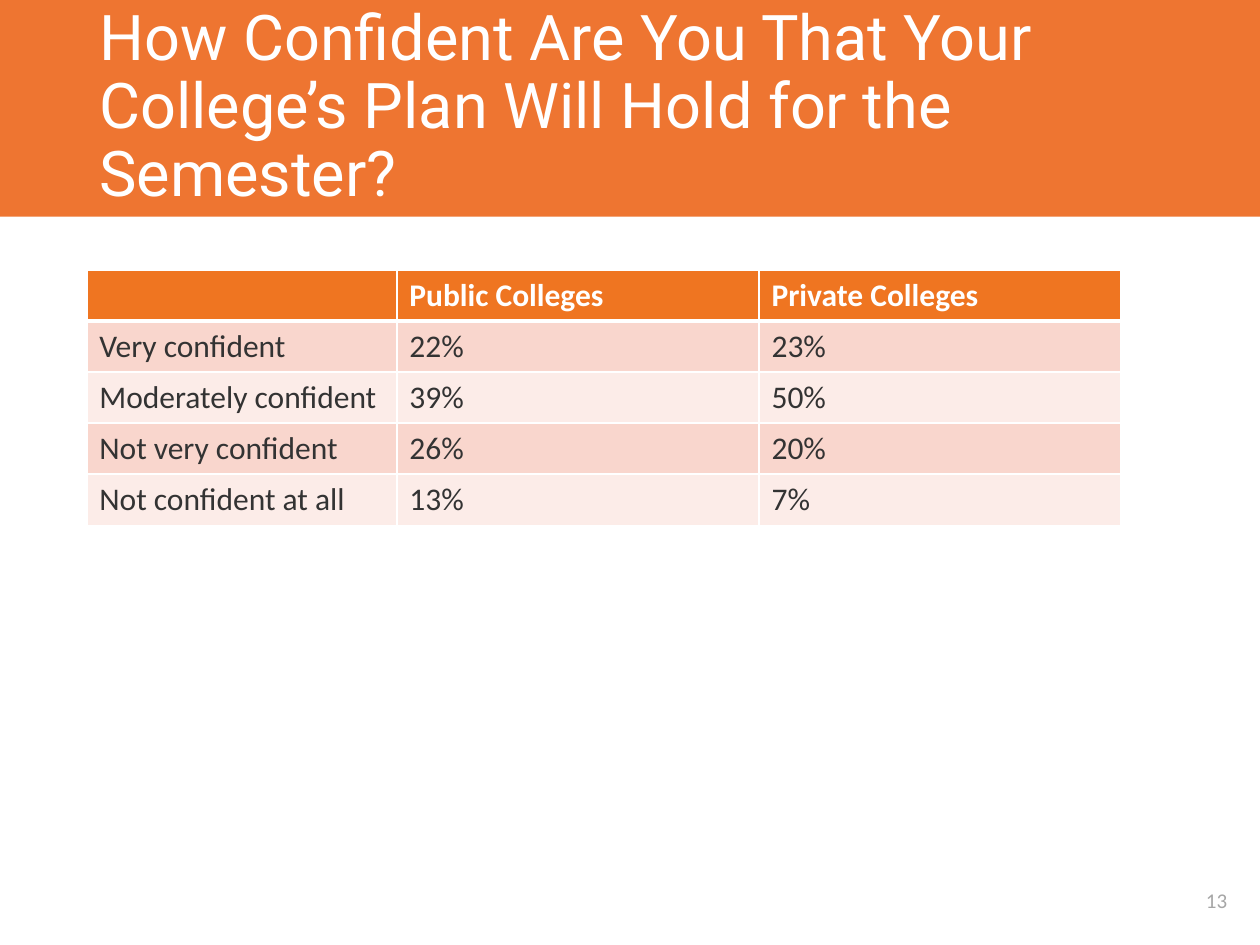
from lxml.etree import SubElement
from pptx import Presentation
from pptx.dml.color import RGBColor
from pptx.enum.shapes import MSO_SHAPE as Shape
from pptx.enum.text import MSO_ANCHOR as Anchor, MSO_AUTO_SIZE as AutoSize, PP_ALIGN as Align
from pptx.oxml.ns import qn
from pptx.util import Cm, Pt

WHITE = "FFFFFF"
ANSWERS = [
    ("", "Public Colleges", "Private Colleges"),
    ("Very confident", "22%", "23%"),
    ("Moderately confident", "39%", "50%"),
    ("Not very confident", "26%", "20%"),
    ("Not confident at all", "13%", "7%"),
]


def color(value):
    return RGBColor.from_string(value)


class SlideBuilder:
    band_fill = "EE7531"
    header_fill = "EF7521"
    row_fills = ("F9D6CD", "FCECE8")
    body_color = "333333"
    number_color = "A6A6A6"
    body_font = "Calibri"
    title_font = "Roboto"

    def __init__(self, page):
        self.page = page

    def style(self, para, name, size, value, bold=False):
        font = para.font
        font.name, font.size, font.bold = name, Pt(size), bold
        font.color.rgb = color(value)

    def title(self, text, left, top, width, height):
        box = self.page.shapes.title
        box.left, box.top, box.width, box.height = Cm(left), Cm(top), Cm(width), Cm(height)
        frame = box.text_frame
        frame.text = text
        frame.auto_size = AutoSize.NONE
        frame.word_wrap = True
        frame.vertical_anchor = Anchor.MIDDLE
        para = frame.paragraphs[0]
        para.alignment = Align.LEFT
        para.line_spacing = 0.9
        self.style(para, self.title_font, 36, WHITE)

    def band(self, left, top, width, height):
        band = self.page.shapes.add_shape(
            Shape.RECTANGLE, Cm(left), Cm(top), Cm(width), Cm(height))
        band.shadow.inherit = False
        band.fill.solid()
        band.fill.fore_color.rgb = color(self.band_fill)
        band.line.fill.background()
        self.page.shapes.title.element.addprevious(band.element)

    def page_number(self, text, left, top, width, height):
        box = self.page.shapes.add_textbox(Cm(left), Cm(top), Cm(width), Cm(height))
        frame = box.text_frame
        frame.word_wrap = True
        frame.vertical_anchor = Anchor.MIDDLE
        frame.text = text
        para = frame.paragraphs[0]
        para.alignment = Align.CENTER
        self.style(para, self.body_font, 12, self.number_color)

    def borders(self, cell, top, bottom):
        properties = cell._tc.get_or_add_tcPr()
        for side, width in (("L", 1), ("R", 1), ("T", top), ("B", bottom)):
            line = SubElement(properties, qn(f"a:ln{side}"), w=str(Pt(width)))
            fill = SubElement(line, qn("a:solidFill"))
            SubElement(fill, qn("a:srgbClr"), val=WHITE)

    def table(self, rows, left, top, widths, row_height):
        frame = self.page.shapes.add_table(
            len(rows), len(widths), Cm(left), Cm(top),
            Cm(sum(widths)), Cm(row_height * len(rows)))
        table = frame.table
        for column, width in zip(table.columns, widths):
            column.width = Cm(width)
        for index, texts in enumerate(rows):
            table.rows[index].height = Cm(row_height)
            header = index == 0
            fill = self.header_fill if header else self.row_fills[(index - 1) % 2]
            for cell, text in zip(table.rows[index].cells, texts):
                self.borders(cell, 3 if index == 1 else 1, 3 if header else 1)
                cell.fill.solid()
                cell.fill.fore_color.rgb = color(fill)
                cell.text = text
                self.style(cell.text_frame.paragraphs[0], self.body_font, 18,
                           WHITE if header else self.body_color, header)


def main():
    deck = Presentation()
    deck.slide_width, deck.slide_height = Cm(25.4), Cm(19.05)
    builder = SlideBuilder(deck.slides.add_slide(deck.slide_layouts[5]))
    builder.band(-0.03, 0, 25.45, 4.37)
    builder.title("How Confident Are You That Your College’s Plan Will Hold for the Semester?",
                  1.75, 0, 21.9, 4.35)
    builder.table(ANSWERS, 1.75, 5.44, (6.25, 7.3, 7.3), 1.03)
    builder.page_number("13", 23.65, 17.65, 1.75, 1)
    deck.save("out.pptx")


if __name__ == "__main__":
    main()
